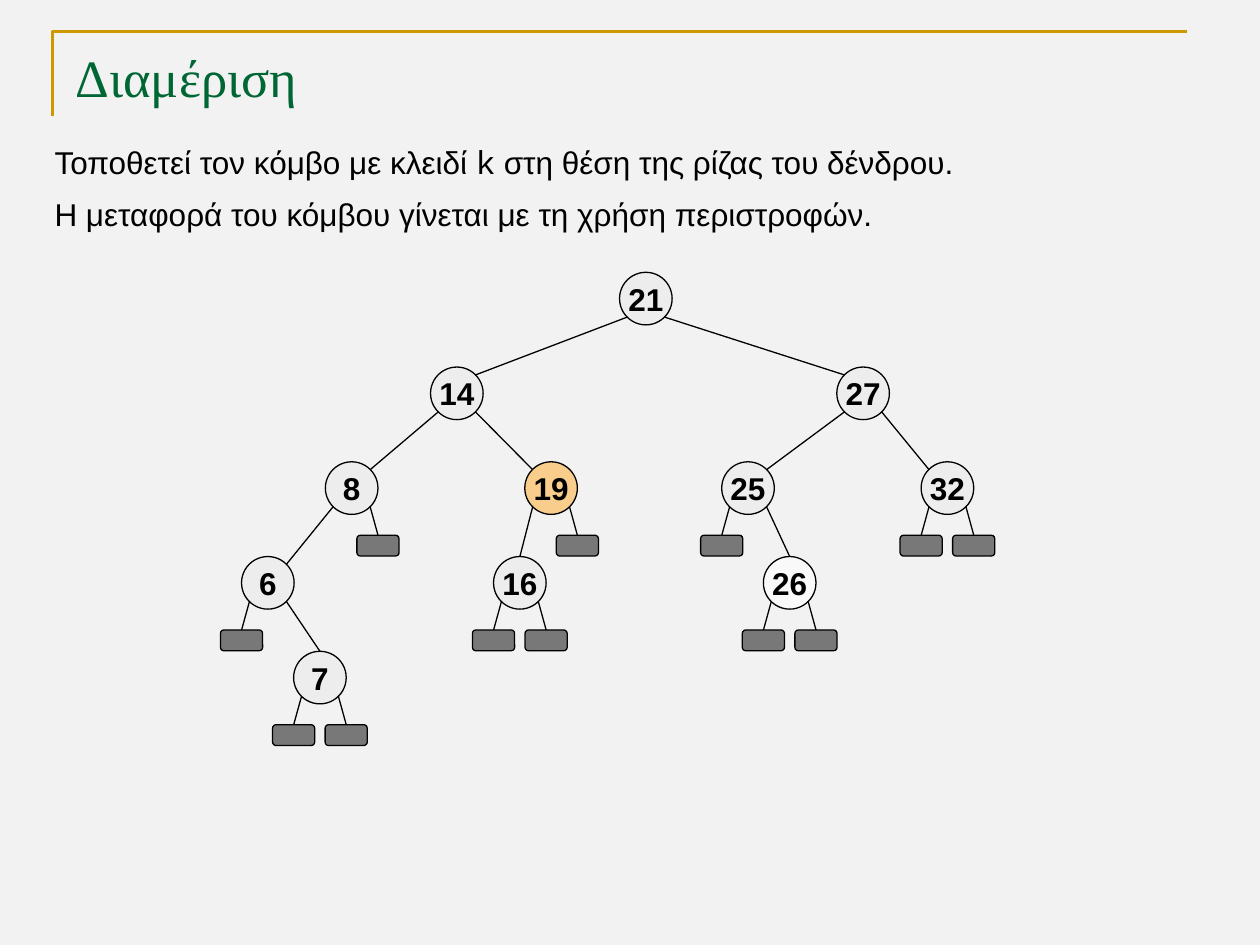
import dataclasses

import lxml.etree
import pptx
import pptx.dml.color
import pptx.enum.shapes
import pptx.enum.text
import pptx.oxml.ns
import pptx.util

Cm = pptx.util.Cm
Pt = pptx.util.Pt
qn = pptx.oxml.ns.qn
Kind = pptx.enum.shapes.MSO_SHAPE
Align = pptx.enum.text.PP_ALIGN
Anchor = pptx.enum.text.MSO_ANCHOR


@dataclasses.dataclass
class Theme:
    paper: str = "F2F2F2"
    ink: str = "000000"
    title: str = "006633"
    rule: str = "CC9900"
    node: str = "EAEAEA"
    mark: str = "FFB547"
    white: str = "FFFFFF"
    head: int = 30
    body: int = 18
    serif: str = "Times New Roman"
    sans: str = "Arial"
    mono: str = "Noto Sans Mono"
    thin: float = 0.75
    thick: float = 1.5


def rgb(code):
    return pptx.dml.color.RGBColor.from_string(code)


RAD = 0.53
SIDE = 0.37
TOP = 6.02
STEP = 1.91
DROP = 0.95
NEAR = 1.3
LEAF = (0.85, 0.42)

TREE = (21, 13.02,
        (14, 9.21,
         (8, 7.09,
          (6, 5.4, None, (7, 6.45, None, None)),
          None),
         (19, 11.11, (16, 10.48, None, None), None)),
        (27, 17.4,
         (25, 15.08, None, (26, 15.92, None, None)),
         (32, 19.1, None, None)))


class Deck:
    def __init__(self, theme):
        self.theme = theme
        self.show = pptx.Presentation()
        self.show.slide_width = Cm(25.4)
        self.show.slide_height = Cm(19.05)
        self.slide = self.show.slides.add_slide(self.show.slide_layouts[5])
        fill = self.slide.background.fill
        fill.solid()
        fill.fore_color.rgb = rgb(theme.paper)

    def style(self, font, name, size, color, bold=False):
        font.name = name
        font.size = Pt(size)
        font.color.rgb = rgb(color)
        font.bold = bold

    def stroke(self, line, color, width):
        line.color.rgb = rgb(color)
        line.width = Pt(width)

    def title(self, text):
        box = self.slide.shapes.title
        box.left, box.top, box.width, box.height = Cm(1.27), Cm(0.86), Cm(22.86), Cm(1.35)
        box.text_frame.text = text
        box.text_frame.vertical_anchor = Anchor.MIDDLE
        para = box.text_frame.paragraphs[0]
        para.alignment = Align.LEFT
        self.style(para.font, self.theme.serif, self.theme.head, self.theme.title)

    def frame(self, start, *points):
        pen = self.slide.shapes.build_freeform(Cm(start[0]), Cm(start[1]))
        pen.add_line_segments([(Cm(x), Cm(y)) for x, y in points], close=False)
        shape = pen.convert_to_shape()
        shape.shadow.inherit = False
        shape.fill.background()
        self.stroke(shape.line, self.theme.rule, self.theme.thick)

    def text(self, top, *parts):
        box = self.slide.shapes.add_textbox(Cm(0.85), Cm(top), Cm(20), Cm(1.03))
        box.text_frame.word_wrap = True
        para = box.text_frame.paragraphs[0]
        self.style(para.font, self.theme.sans, self.theme.body, self.theme.ink)
        for words, face in parts:
            run = para.add_run()
            run.text = words
            run.font.name = face

    def shape(self, kind, x, y, wide, high, color, alpha):
        shape = self.slide.shapes.add_shape(
            kind, Cm(x - wide / 2), Cm(y - high / 2), Cm(wide), Cm(high))
        shape.shadow.inherit = False
        shape.fill.solid()
        shape.fill.fore_color.rgb = rgb(color)
        tint = shape.element.spPr.find(qn("a:solidFill")).find(qn("a:srgbClr"))
        lxml.etree.SubElement(tint, qn("a:alpha"), val=str(alpha * 1000))
        self.stroke(shape.line, self.theme.ink, self.theme.thin)
        return shape

    def node(self, key, x, y):
        color = {19: self.theme.mark, 26: self.theme.white}.get(key, self.theme.node)
        shape = self.shape(Kind.OVAL, x, y, 2 * RAD, 2 * RAD, color, 60)
        frame = shape.text_frame
        frame.word_wrap = False
        frame.vertical_anchor = Anchor.MIDDLE
        frame.text = str(key)
        para = frame.paragraphs[0]
        para.alignment = Align.CENTER
        self.style(para.font, self.theme.sans, self.theme.body, self.theme.ink, True)

    def leaf(self, x, top):
        wide, high = LEAF
        self.shape(Kind.ROUNDED_RECTANGLE, x, top + high / 2, wide, high, self.theme.ink, 50)

    def link(self, x, y, to_x, to_y):
        line = self.slide.shapes.add_connector(
            pptx.enum.shapes.MSO_CONNECTOR.STRAIGHT, Cm(x), Cm(y), Cm(to_x), Cm(to_y))
        self.stroke(line.line, self.theme.ink, self.theme.thin)
        lxml.etree.SubElement(line.element.spPr, qn("a:effectLst"))

    def tree(self, root, y):
        key, x, *kids = root
        self.node(key, x, y)
        for sign, kid in zip((-1, 1), kids):
            start = x + sign * SIDE, y + SIDE
            if kid is None:
                end = x + sign * RAD, y + DROP
                self.leaf(*end)
            else:
                low = y + STEP
                if abs(kid[1] - x) < NEAR:
                    end = kid[1], low - RAD
                else:
                    end = kid[1] - sign * SIDE, low - SIDE
                self.tree(kid, low)
            self.link(*start, *end)


def main():
    theme = Theme()
    deck = Deck(theme)
    deck.frame((1.06, 2.34), (1.06, 0.64), (23.92, 0.64))
    deck.title("Διαμέριση")
    deck.text(2.75,
              ("Τοποθετεί τον κόμβο με κλειδί ", theme.sans),
              ("k", theme.mono),
              (" στη θέση της ρίζας του δένδρου.", theme.sans))
    deck.text(3.81,
              ("Η μεταφορά του κόμβου γίνεται με τη χρήση περιστροφών.", theme.sans))
    deck.tree(TREE, TOP)
    deck.show.save("out.pptx")


if __name__ == "__main__":
    main()
